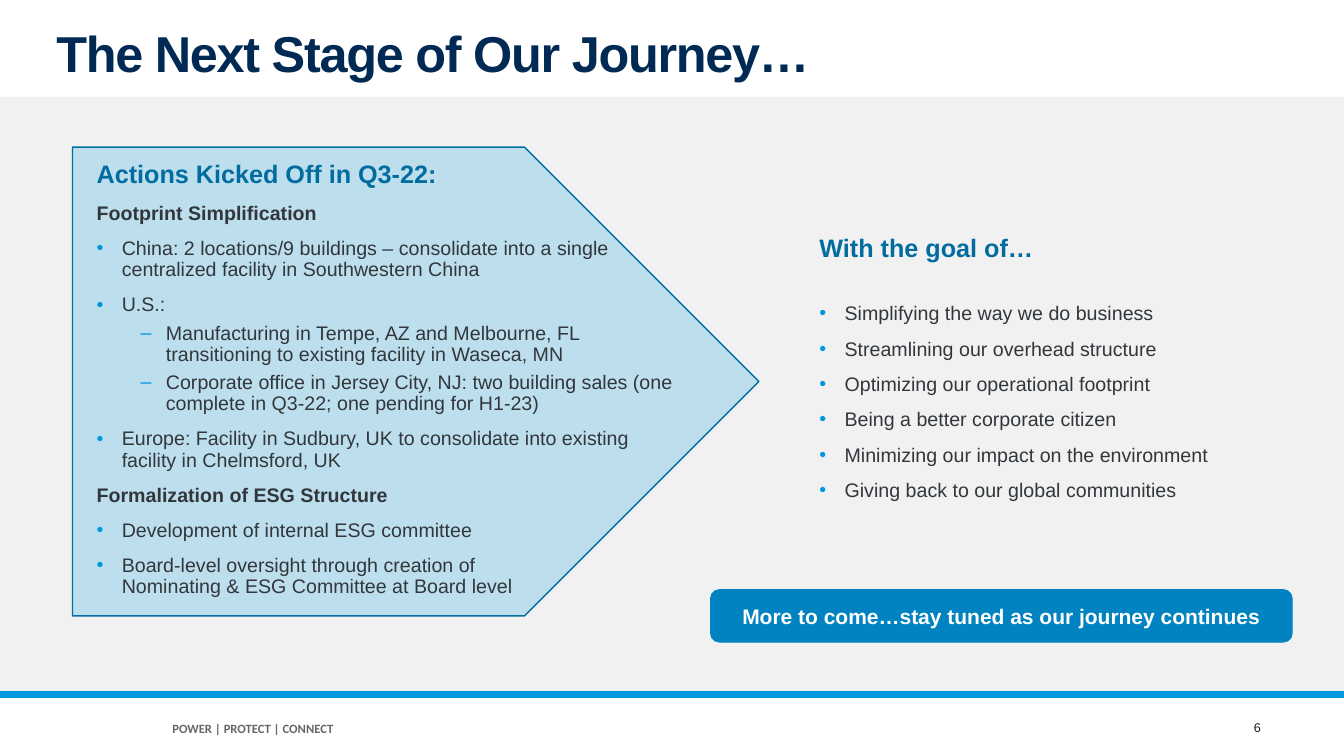
from dataclasses import dataclass

from lxml import etree
from pptx import Presentation
from pptx.dml.color import RGBColor
from pptx.enum.shapes import MSO_CONNECTOR, MSO_SHAPE
from pptx.enum.text import MSO_ANCHOR, PP_ALIGN
from pptx.oxml.ns import qn
from pptx.util import Pt

RECT, PENTAGON, ROUNDED = MSO_SHAPE.RECTANGLE, MSO_SHAPE.PENTAGON, MSO_SHAPE.ROUNDED_RECTANGLE
STRAIGHT = MSO_CONNECTOR.STRAIGHT
TOP, MIDDLE, BOTTOM = MSO_ANCHOR.TOP, MSO_ANCHOR.MIDDLE, MSO_ANCHOR.BOTTOM
LEFT, CENTER = PP_ALIGN.LEFT, PP_ALIGN.CENTER


@dataclass(frozen=True)
class Theme:
    navy: str = "002A53"
    heading: str = "006CA0"
    body: str = "32373C"
    accent: str = "0098DC"
    outline: str = "0070A3"
    button: str = "0083C0"
    panel: str = "F1F1F1"
    tagline: str = "63666A"
    number: str = "191919"
    white: str = "FFFFFF"
    font: str = "Arial"
    footer_font: str = "Calibri"
    title_pt: float = 36
    heading_pt: float = 18
    button_pt: float = 15
    body_pt: float = 14
    footer_pt: float = 9


@dataclass(frozen=True)
class Box:
    left: float
    top: float
    width: float
    height: float

    def emu(self):
        return Pt(self.left), Pt(self.top), Pt(self.width), Pt(self.height)


@dataclass(frozen=True)
class Style:
    size: float
    color: str
    bold: bool = False
    font: str = "Arial"
    align: PP_ALIGN = LEFT
    spacing: float = 1.0
    before: float = 0
    after: float = 0
    bullet: str = ""
    indent: float = 0
    level: int = 0
    tracking: int = 0


T = Theme()
HEADING = Style(T.heading_pt, T.heading, True, spacing=0.9)
GOAL_HEADING = Style(T.heading_pt, T.heading, True, spacing=0.9, after=19)
SUBHEAD = Style(T.body_pt, T.body, True, spacing=0.9, before=10)
BULLET = Style(T.body_pt, T.body, spacing=0.9, before=10, bullet="•", indent=18)
DASH = Style(T.body_pt, T.body, spacing=0.9, before=5, bullet="‒", indent=49.5, level=1)
GOAL = Style(T.body_pt, T.body, spacing=1.5, bullet="•", indent=18)
HANGING = 18

ACTIONS = [
    ("Actions Kicked Off in Q3-22:", HEADING),
    ("Footprint Simplification", SUBHEAD),
    ("China: 2 locations/9 buildings – consolidate into a single "
     "centralized facility in Southwestern China", BULLET),
    ("U.S.:", BULLET),
    ("Manufacturing in Tempe, AZ and Melbourne, FL transitioning to "
     "existing facility in Waseca, MN", DASH),
    ("Corporate office in Jersey City, NJ: two building sales (one "
     "complete in Q3-22; one pending for H1-23)", DASH),
    ("Europe: Facility in Sudbury, UK to consolidate into existing "
     "facility in Chelmsford, UK", BULLET),
    ("Formalization of ESG Structure", SUBHEAD),
    ("Development of internal ESG committee", BULLET),
    ("Board-level oversight through creation of\n"
     "Nominating & ESG Committee at Board level", BULLET),
]
GOALS = [
    "Simplifying the way we do business",
    "Streamlining our overhead structure",
    "Optimizing our operational footprint",
    "Being a better corporate citizen",
    "Minimizing our impact on the environment",
    "Giving back to our global communities",
]


def rgb(color: str) -> RGBColor:
    return RGBColor.from_string(color)


def add_bullet(p, style: Style) -> None:
    pPr = p._p.get_or_add_pPr()
    pPr.set("marL", str(Pt(style.indent)))
    pPr.set("indent", str(-Pt(HANGING)))
    color = etree.SubElement(pPr, qn("a:buClr"))
    etree.SubElement(color, qn("a:srgbClr"), val=T.accent)
    etree.SubElement(pPr, qn("a:buFont"), typeface=T.font)
    etree.SubElement(pPr, qn("a:buChar"), char=style.bullet)


def write(s, paragraphs, *, anchor=TOP, inset=(7.2, 3.6), wrap=True) -> None:
    tf = s.text_frame
    tf.word_wrap = wrap
    tf.vertical_anchor = anchor
    tf.margin_left = tf.margin_right = Pt(inset[0])
    tf.margin_top = tf.margin_bottom = Pt(inset[1])
    for i, (text, style) in enumerate(paragraphs):
        p = tf.paragraphs[0] if i == 0 else tf.add_paragraph()
        p.alignment, p.level = style.align, style.level
        p.line_spacing = style.spacing
        p.space_before, p.space_after = Pt(style.before), Pt(style.after)
        if style.bullet:
            add_bullet(p, style)
        for j, line in enumerate(text.split("\n")):
            if j:
                p.add_line_break()
            r = p.add_run()
            r.text = line
            r.font.name, r.font.size, r.font.bold = style.font, Pt(style.size), style.bold
            r.font.color.rgb = rgb(style.color)
            if style.tracking:
                r._r.get_or_add_rPr().set("spc", str(style.tracking))


def add_text(slide, box: Box, paragraphs, **layout) -> None:
    write(slide.shapes.add_textbox(*box.emu()), paragraphs, **layout)


def add_block(slide, kind, box: Box, fill: str, *, line="", width=1.0, alpha=100):
    s = slide.shapes.add_shape(kind, *box.emu())
    s.shadow.inherit = False
    s.fill.solid()
    s.fill.fore_color.rgb = rgb(fill)
    if alpha < 100:
        color = s._element.spPr.find(qn("a:solidFill")).find(qn("a:srgbClr"))
        etree.SubElement(color, qn("a:alpha"), val=str(alpha * 1000))
    if line:
        s.line.color.rgb, s.line.width = rgb(line), Pt(width)
    else:
        s.line.fill.background()
    return s


def add_rule(slide, y: float, width: float) -> None:
    s = slide.shapes.add_connector(STRAIGHT, Pt(0), Pt(y), Pt(width), Pt(y))
    s.line.color.rgb, s.line.width = rgb(T.accent), Pt(4.5)
    etree.SubElement(s._element.spPr, qn("a:effectLst"))


def main() -> None:
    prs = Presentation()
    prs.slide_width, prs.slide_height = Pt(960), Pt(540)
    slide = prs.slides.add_slide(prs.slide_layouts[6])

    # Background panel and footer
    add_block(slide, RECT, Box(0, 69.1, 960, 427), T.panel)
    add_text(slide, Box(123.1, 515.5, 134, 10.1),
             [("POWER | PROTECT | CONNECT",
               Style(T.footer_pt, T.tagline, True, T.footer_font))],
             anchor=MIDDLE, inset=(0, 0))
    add_text(slide, Box(890.6, 511.9, 15.1, 15.1),
             [("6", Style(T.footer_pt, T.number, align=CENTER))],
             anchor=BOTTOM, inset=(2.2, 2.2), wrap=False)
    add_rule(slide, 496.1, 960)

    # Actions in the arrow
    add_block(slide, PENTAGON, Box(51.8, 105.1, 490.3, 334.8), T.accent,
              line=T.outline, alpha=21)
    add_text(slide, Box(61.9, 112.3, 435.6, 319.7), ACTIONS)

    # Title
    add_text(slide, Box(33.1, 20.9, 864.7, 42.5),
             [("The Next Stage of Our Journey…",
               Style(T.title_pt, T.navy, True, spacing=0.8, tracking=-90))])

    # Goals
    add_text(slide, Box(578.2, 164.9, 337, 196.6),
             [("With the goal of…", GOAL_HEADING)] + [(goal, GOAL) for goal in GOALS])

    # Closing message
    s = add_block(slide, ROUNDED, Box(507.6, 421.2, 415.4, 37.4), T.button,
                  line=T.button, width=0.75)
    write(s, [("More to come…stay tuned as our journey continues",
               Style(T.button_pt, T.white, True, align=CENTER))], anchor=MIDDLE)

    prs.save("out.pptx")


if __name__ == "__main__":
    main()
